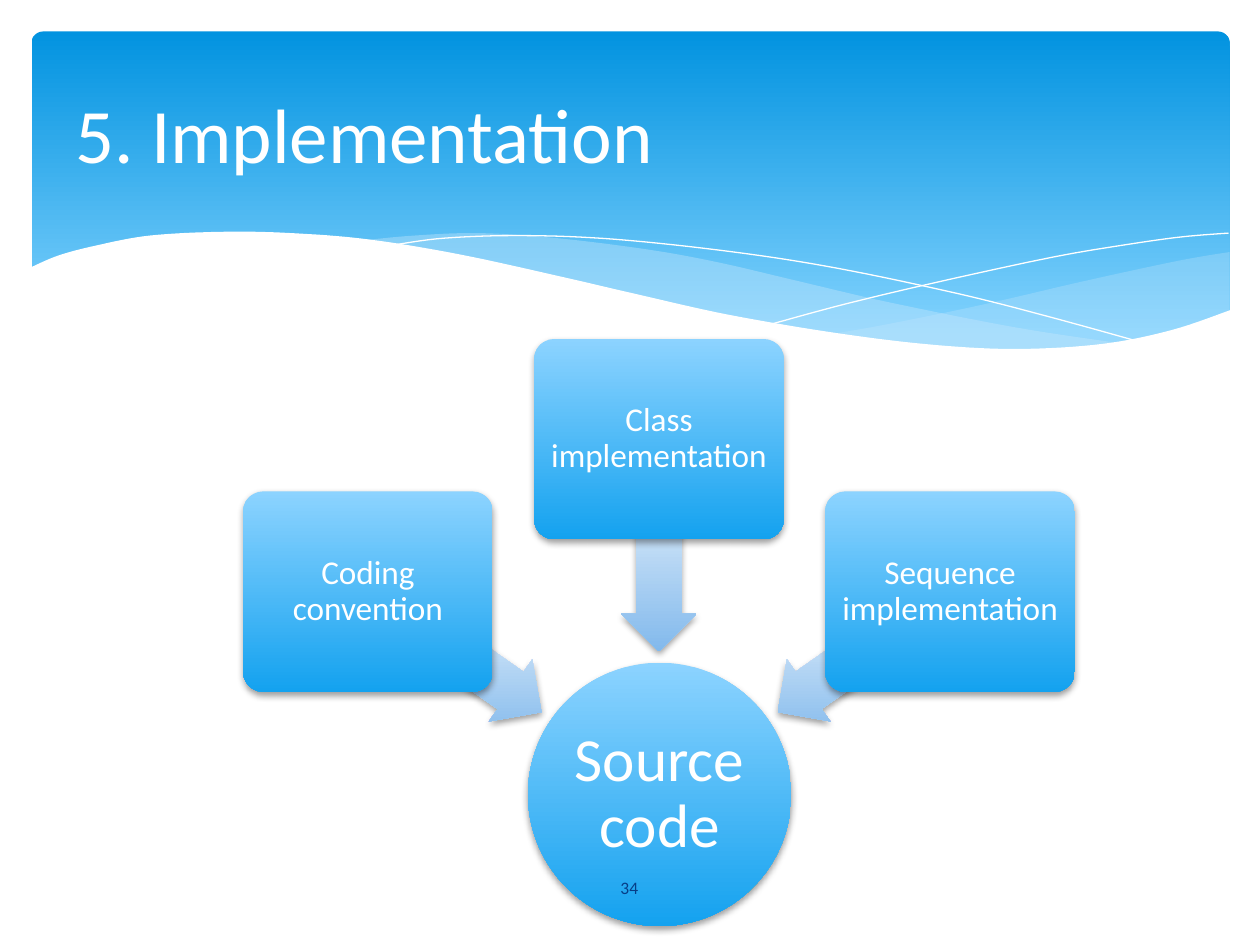
"""Build the Implementation slide: a wave banner above three inputs converging on source code."""
from lxml.etree import SubElement
from pptx import Presentation
from pptx.dml.color import RGBColor
from pptx.enum.shapes import MSO_SHAPE
from pptx.enum.text import MSO_ANCHOR, PP_ALIGN
from pptx.oxml.ns import qn
from pptx.util import Inches, Pt

COLORS = {
    "white": "FFFFFF", "banner_top": "0293E0", "banner_end": "83D3FE",
    "wave": "C6E7FC", "node_top": "8CD3FF", "node_end": "14A2EF",
    "arrow_end": "82B9EC", "number": "073E87", "shadow": "000000",
}
FONT = "Calibri"
TITLE = "5. Implementation"
HUB = "Source code"
NUMBER = "34"
INPUTS = [
    {"text": "Coding convention", "top": 3.9, "arrow": (2.77, 4.87), "turn": 215},
    {"text": "Class implementation", "top": 2.69, "arrow": (4.39, 4.03), "turn": 270},
    {"text": "Sequence implementation", "top": 3.9, "arrow": (6.02, 4.87), "turn": 325},
]
INPUT_LEFT, INPUT_STEP = 1.93, 2.31

WAVES = [
    {"fill": "wave", "alpha": 29, "edges": [
        [(9.76, 2), (9.35, 2.07), (8.61, 2.23), (7.79, 2.42), (7.06, 2.57), (6.61, 2.65)],
        [(6.61, 2.65), (7.05, 2.71), (7.57, 2.76), (8.14, 2.78), (8.72, 2.74),
         (9.21, 2.65), (9.76, 2.47)]]},
    {"fill": "wave", "alpha": 40, "edges": [
        [(8.93, 2.73), (8.07, 2.6), (7.06, 2.4), (6.29, 2.22), (5.69, 2.08), (5.14, 1.98),
         (4.42, 1.89), (3.8, 1.85), (3.28, 1.87), (2.86, 1.91)],
        [(2.86, 1.91), (3.62, 2.03), (4.49, 2.22), (5.3, 2.4), (6.01, 2.55), (6.8, 2.68),
         (7.48, 2.76), (8.18, 2.78), (8.93, 2.73)]]},
    {"line": "white", "edges": [
        [(3.09, 1.95), (3.53, 1.89), (4.16, 1.87), (4.89, 1.9), (5.82, 2), (6.65, 2.13),
         (7.6, 2.33), (8.31, 2.51), (9.07, 2.72)]]},
    {"line": "white", "edges": [
        [(6.13, 2.57), (6.72, 2.41), (7.48, 2.23), (8.36, 2.04), (8.95, 1.94), (9.38, 1.88),
         (9.75, 1.85)]]},
    {"fill": "white", "alpha": 100, "edges": [
        [(9.77, 2.46), (9.3, 2.62), (8.75, 2.73), (8.09, 2.77), (7.44, 2.74), (6.68, 2.65),
         (5.79, 2.5), (5.03, 2.33), (4.47, 2.2), (3.65, 2.02), (2.92, 1.9), (2.3, 1.85),
         (1.77, 1.84), (1.19, 1.87), (0.76, 1.95), (0.46, 2.03), (0.23, 2.13)],
        [(0.23, 3.29), (9.77, 3.29)]]},
]


def rgb(name):
    return RGBColor.from_string(COLORS[name])


def smooth(points, steps=8):
    padded = [points[0], *points, points[-1]]
    curve = [points[0]]
    for a, b, c, d in zip(padded, padded[1:], padded[2:], padded[3:]):
        for t in (i / steps for i in range(1, steps + 1)):
            curve.append(tuple(
                0.5 * (2 * q + (r - p) * t + (2 * p - 5 * q + 4 * r - s) * t ** 2
                       + (3 * q - p - 3 * r + s) * t ** 3)
                for p, q, r, s in zip(a, b, c, d)))
    return curve


def add_wave(shapes, wave):
    points = [(Inches(x), Inches(y)) for edge in wave["edges"] for x, y in smooth(edge)]
    builder = shapes.build_freeform(*points[0])
    builder.add_line_segments(points[1:], close="fill" in wave)
    sp = builder.convert_to_shape()
    sp.shadow.inherit = False
    if "line" in wave:
        sp.fill.background()
        sp.line.color.rgb = rgb(wave["line"])
        sp.line.width = Pt(0)
        return
    sp.line.fill.background()
    sp.fill.solid()
    sp.fill.fore_color.rgb = rgb(wave["fill"])
    color = sp._element.spPr.find(qn("a:solidFill"))[0]
    SubElement(color, qn("a:alpha"), val=str(wave["alpha"] * 1000))


def add_gradient_shape(shapes, kind, box, first, last, end=1.0, adj=(), turn=0):
    sp = shapes.add_shape(kind, *map(Inches, box))
    sp.shadow.inherit = False
    sp.rotation = turn
    for i, value in enumerate(adj):
        sp.adjustments[i] = value
    sp.line.fill.background()
    sp.fill.gradient()
    sp.fill.gradient_angle = 270
    for stop, name, position in zip(sp.fill.gradient_stops, (first, last), (0, end)):
        stop.color.rgb = rgb(name)
        stop.position = position
    sp._element.spPr.find(qn("a:gradFill")).set("rotWithShape", "0")
    return sp


def add_shadow(sp):
    effects = sp._element.spPr.find(qn("a:effectLst"))
    shadow = SubElement(effects, qn("a:outerShdw"), blurRad=str(Pt(4)), dist=str(Pt(2)),
                        dir="5400000", rotWithShape="0")
    color = SubElement(shadow, qn("a:srgbClr"), val=COLORS["shadow"])
    SubElement(color, qn("a:alpha"), val="38000")


def set_text(sp, text, size, color="white", align=PP_ALIGN.CENTER, inset=None, spacing=None):
    tf = sp.text_frame
    frame = {"word_wrap": True, "vertical_anchor": MSO_ANCHOR.MIDDLE}
    if inset is not None:
        sides = ("left", "top", "right", "bottom")
        frame.update({f"margin_{side}": Inches(inset) for side in sides})
    p = tf.paragraphs[0]
    r = p.add_run()
    r.text = text
    r.font.color.rgb = rgb(color)
    for target, values in (
            (tf, frame),
            (p, {"alignment": align, "line_spacing": spacing}),
            (r.font, {"name": FONT, "size": Pt(size)})):
        for key, value in values.items():
            setattr(target, key, value)


def add_node(shapes, kind, box, text, size, inset, adj=()):
    sp = add_gradient_shape(shapes, kind, box, "node_top", "node_end", adj=adj)
    add_shadow(sp)
    set_text(sp, text, size, inset=inset, spacing=0.9)


def main():
    prs = Presentation()
    prs.slide_width, prs.slide_height = Inches(10), Inches(7.5)
    s = prs.slides.add_slide(prs.slide_layouts[6])
    shapes = s.shapes

    add_gradient_shape(shapes, MSO_SHAPE.ROUNDED_RECTANGLE, (0.25, 0.25, 9.51, 2.7),
                       "banner_top", "banner_end", end=0.9, adj=(0.034,))
    for wave in WAVES:
        add_wave(shapes, wave)
    title = shapes.add_textbox(*map(Inches, (0.5, 0.37, 9, 1.37)))
    set_text(title, TITLE, 44, align=PP_ALIGN.LEFT)

    add_node(shapes, MSO_SHAPE.OVAL, (4.19, 5.26, 2.09, 2.09), HUB, 35, 0.02)
    for i, item in enumerate(INPUTS):
        arrow = add_gradient_shape(shapes, MSO_SHAPE.LEFT_ARROW, (*item["arrow"], 1.68, 0.6),
                                   "white", "arrow_end", adj=(0.6, 0.5), turn=item["turn"])
        add_shadow(arrow)
        box = (INPUT_LEFT + i * INPUT_STEP, item["top"], 1.98, 1.59)
        add_node(shapes, MSO_SHAPE.ROUNDED_RECTANGLE, box, item["text"], 19, 0.04, adj=(0.1,))

    number = shapes.add_textbox(*map(Inches, (4.36, 6.84, 1.27, 0.4)))
    set_text(number, NUMBER, 10, "number")
    prs.save("out.pptx")


if __name__ == "__main__":
    main()
